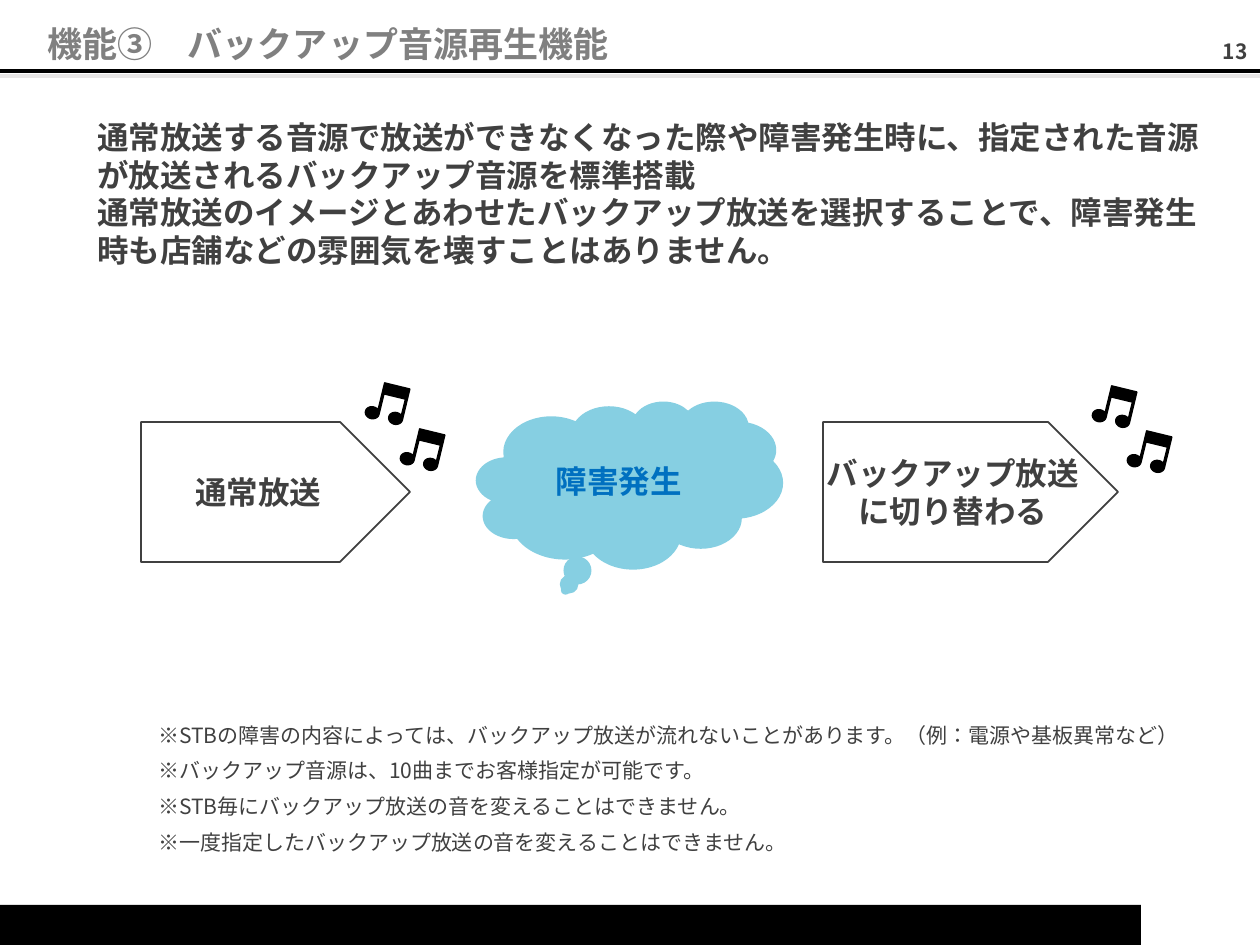
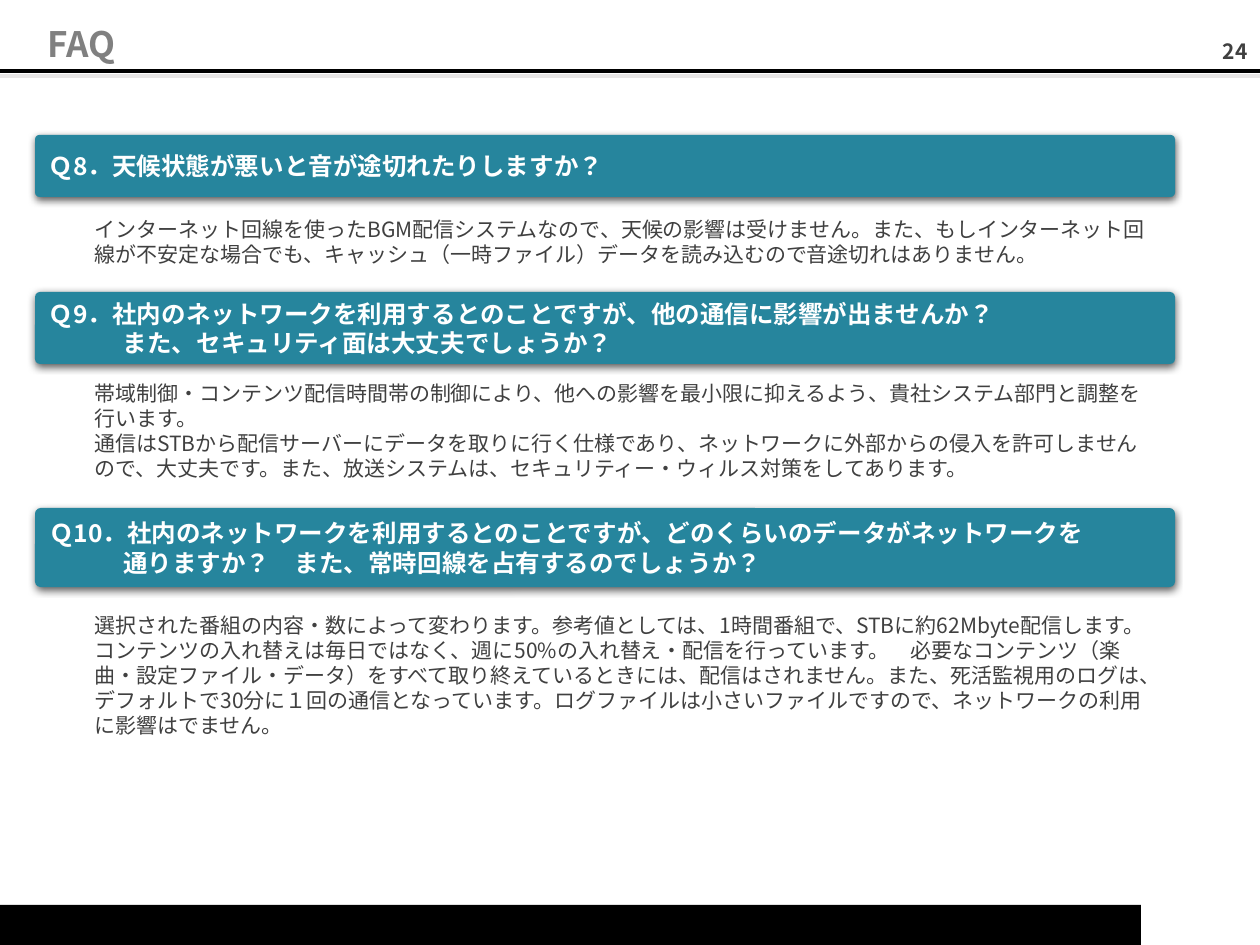
"""Build a two-page deck: the backup audio function and its FAQ."""
from dataclasses import dataclass
import math

import lxml.etree
import pptx
import pptx.dml.color
import pptx.enum.lang
import pptx.enum.shapes
import pptx.enum.text
import pptx.oxml.ns
import pptx.util

RGB = pptx.dml.color.RGBColor
SHAPE = pptx.enum.shapes.MSO_SHAPE
ALIGN = pptx.enum.text.PP_ALIGN
ANCHOR = pptx.enum.text.MSO_ANCHOR

BLACK = RGB(0x00, 0x00, 0x00)
WHITE = RGB(0xFF, 0xFF, 0xFF)
INK = RGB(0x40, 0x40, 0x40)
TITLE_GRAY = RGB(0x80, 0x80, 0x80)
RULE_GRAY = RGB(0xE7, 0xE6, 0xE6)
TEAL = RGB(0x26, 0x85, 0x9D)
SKY = RGB(0x86, 0xCF, 0xE2)
ALERT_BLUE = RGB(0x00, 0x70, 0xC0)

FONT = "Noto Sans CJK JP"
EMU_PER_PX = 914400 / 126
PAGE_WIDTH, PAGE_HEIGHT = 1260, 945
QUESTION_INDENT = 74
NOTE_TILT = 13.6


@dataclass(frozen=True)
class Area:
    left: int
    top: int
    width: int
    height: int


@dataclass(frozen=True)
class Style:
    size: int
    color: RGB = INK
    bold: bool = True
    align: ALIGN = ALIGN.LEFT
    anchor: ANCHOR = ANCHOR.MIDDLE
    wrap: bool = True
    space_after: int = 0


@dataclass(frozen=True)
class Faq:
    question: tuple[str, ...]
    question_top: int
    question_height: int
    answer: tuple[str, ...]
    answer_top: int
    answer_height: int


TITLE = Style(20, TITLE_GRAY, anchor=ANCHOR.TOP)
PAGE_NUMBER = Style(12, align=ALIGN.RIGHT)
LEAD = Style(18)
STEP = Style(18, align=ALIGN.CENTER, wrap=False)
ALERT = Style(18, ALERT_BLUE, align=ALIGN.CENTER)
REMARK = Style(12, bold=False, anchor=ANCHOR.TOP, space_after=6)
QUESTION = Style(14, WHITE)
ANSWER = Style(12, bold=False, anchor=ANCHOR.TOP)

LEAD_LINES = (
    "通常放送する音源で放送ができなくなった際や障害発生時に、指定された音源が放送されるバックアップ音源を標準搭載",
    "通常放送のイメージとあわせたバックアップ放送を選択することで、障害発生時も店舗などの雰囲気を壊すことはありません。",
)
REMARKS = (
    "※STBの障害の内容によっては、バックアップ放送が流れないことがあります。（例：電源や基板異常など）",
    "※バックアップ音源は、10曲までお客様指定が可能です。",
    "※STB毎にバックアップ放送の音を変えることはできません。",
    "※一度指定したバックアップ放送の音を変えることはできません。",
)
STEPS = (
    (Area(141, 422, 269, 140), ("通常放送",)),
    (Area(823, 422, 295, 140), ("バックアップ放送", "に切り替わる")),
)
MUSIC_NOTES = ((403, 430), (368, 384), (1130, 432), (1095, 387))
FAQS = (
    Faq(
        ("Ｑ8．天候状態が悪いと音が途切れたりしますか？",), 135, 62,
        ("インターネット回線を使ったBGM配信システムなので、天候の影響は受けません。また、もしインターネット回線が"
         "不安定な場合でも、キャッシュ（一時ファイル）データを読み込むので音途切れはありません。",), 210, 63,
    ),
    Faq(
        ("Ｑ9．社内のネットワークを利用するとのことですが、他の通信に影響が出ませんか？",
         "また、セキュリティ面は大丈夫でしょうか？"), 292, 72,
        ("帯域制御・コンテンツ配信時間帯の制御により、他への影響を最小限に抑えるよう、貴社システム部門と調整を行います。",
         "通信はSTBから配信サーバーにデータを取りに行く仕様であり、ネットワークに外部からの侵入を許可しませんので、"
         "大丈夫です。また、放送システムは、セキュリティー・ウィルス対策をしてあります。"), 374, 115,
    ),
    Faq(
        ("Ｑ10．社内のネットワークを利用するとのことですが、どのくらいのデータがネットワークを",
         "通りますか？　また、常時回線を占有するのでしょうか？"), 508, 79,
        ("選択された番組の内容・数によって変わります。参考値としては、1時間番組で、STBに約62Mbyte配信します。"
         "コンテンツの入れ替えは毎日ではなく、週に50%の入れ替え・配信を行っています。　必要なコンテンツ"
         "（楽曲・設定ファイル・データ）をすべて取り終えているときには、配信はされません。また、死活監視用のログは、"
         "デフォルトで30分に１回の通信となっています。ログファイルは小さいファイルですので、"
         "ネットワークの利用に影響はでません。",), 606, 140,
    ),
)


def px(length: float) -> pptx.util.Emu:
    return pptx.util.Emu(round(length * EMU_PER_PX))


def bounds(area: Area) -> tuple:
    return px(area.left), px(area.top), px(area.width), px(area.height)


def add_element(parent, tag: str, **attributes: str):
    return lxml.etree.SubElement(parent, pptx.oxml.ns.qn(tag), attributes)


def write(shape, lines: tuple[str, ...], style: Style) -> None:
    frame = shape.text_frame
    frame.text = "\n".join(lines)
    frame.word_wrap = style.wrap
    frame.vertical_anchor = style.anchor
    for para in frame.paragraphs:
        para.alignment = style.align
        para.space_after = pptx.util.Pt(style.space_after)
        for span in para.runs:
            font = span.font
            font.name = FONT
            font.size = pptx.util.Pt(style.size)
            font.bold = style.bold
            font.color.rgb = style.color
            font.language_id = pptx.enum.lang.MSO_LANGUAGE_ID.JAPANESE
            add_element(span._r.get_or_add_rPr(), "a:ea", typeface=FONT)


def add_text(page, area: Area, lines: tuple[str, ...], style: Style):
    box = page.shapes.add_textbox(*bounds(area))
    write(box, lines, style)
    return box


def paint(shape, fill: RGB | None, line: RGB | None = None, weight: float = 1) -> None:
    shape.shadow.inherit = False
    if fill is None:
        shape.fill.background()
    else:
        shape.fill.solid()
        shape.fill.fore_color.rgb = fill
    if line is None:
        shape.line.fill.background()
    else:
        shape.line.color.rgb = line
        shape.line.width = pptx.util.Pt(weight)


def add_shape(page, kind: SHAPE, area: Area, fill: RGB | None, line: RGB | None = None):
    shape = page.shapes.add_shape(kind, *bounds(area))
    paint(shape, fill, line)
    return shape


def add_rule(page, top: int, color: RGB) -> None:
    rule = page.shapes.add_connector(
        pptx.enum.shapes.MSO_CONNECTOR.STRAIGHT, 0, px(top), px(PAGE_WIDTH), px(top))
    rule.line.color.rgb = color
    rule.line.width = pptx.util.Pt(2.25)
    add_element(rule._element.spPr, "a:effectLst")


def add_page(deck, title: str, number: int):
    page = deck.slides.add_slide(deck.slide_layouts[5])
    add_shape(page, SHAPE.RECTANGLE, Area(0, 905, 1141, 40), BLACK)
    add_rule(page, 71, BLACK)
    add_rule(page, 76, RULE_GRAY)
    add_text(page, Area(1121, 33, 139, 37), (str(number),), PAGE_NUMBER)
    heading = page.shapes.title
    heading.left, heading.top, heading.width, heading.height = bounds(Area(35, 16, 1062, 55))
    write(heading, (title,), TITLE)
    heading.text_frame.auto_size = pptx.enum.text.MSO_AUTO_SIZE.NONE
    return page


def note_head(center_x: int) -> list[tuple[float, float]]:
    angles = [math.radians(degrees) for degrees in range(45, 361, 15)]
    return [(center_x + 7 * math.cos(angle), 32 - 6 * math.sin(angle)) for angle in angles]


def add_music_note(page, left: int, top: int) -> None:
    outline = [(12, 0), *note_head(7), (14, 11), (36, 11), *note_head(31), (38, 0)]
    points = [(px(x), px(y)) for x, y in outline]
    builder = page.shapes.build_freeform(*points[0])
    builder.add_line_segments(points[1:], close=True)
    note = builder.convert_to_shape(px(left), px(top))
    paint(note, BLACK, BLACK, 0.75)
    note.rotation = NOTE_TILT


def add_soft_shadow(shape) -> None:
    effects = shape._element.spPr.find(pptx.oxml.ns.qn("a:effectLst"))
    shadow = add_element(
        effects, "a:outerShdw", blurRad=str(pptx.util.Pt(4.5)), dist=str(pptx.util.Pt(1.5)),
        dir="5400000", algn="ctr", rotWithShape="0")
    color = add_element(shadow, "a:srgbClr", val=str(BLACK))
    add_element(color, "a:alpha", val="63000")


def add_faq(page, faq: Faq) -> None:
    band = add_shape(
        page, SHAPE.ROUNDED_RECTANGLE, Area(35, faq.question_top, 1140, faq.question_height), TEAL)
    band.adjustments[0] = 0.07
    add_soft_shadow(band)
    write(band, faq.question, QUESTION)
    for para in band.text_frame.paragraphs[1:]:
        para._p.get_or_add_pPr().set("marL", str(px(QUESTION_INDENT)))
    add_text(page, Area(82, faq.answer_top, 1087, faq.answer_height), faq.answer, ANSWER)


def build_backup_page(deck) -> None:
    page = add_page(deck, "機能③　バックアップ音源再生機能", 13)
    lead = add_shape(page, SHAPE.ROUNDED_RECTANGLE, Area(79, 106, 1140, 175), None)
    lead.adjustments[0] = 0.11
    write(lead, LEAD_LINES, LEAD)
    add_text(page, Area(146, 716, 1071, 146), REMARKS, REMARK)
    for left, top in MUSIC_NOTES:
        add_music_note(page, left, top)
    for area, lines in STEPS:
        write(add_shape(page, SHAPE.PENTAGON, area, WHITE, INK), lines, STEP)
    cloud = add_shape(page, SHAPE.CLOUD_CALLOUT, Area(476, 401, 307, 168), SKY)
    write(cloud, ("障害発生",), ALERT)


def build_faq_page(deck) -> None:
    page = add_page(deck, "FAQ", 24)
    for faq in FAQS:
        add_faq(page, faq)


def main() -> None:
    deck = pptx.Presentation()
    deck.slide_width, deck.slide_height = px(PAGE_WIDTH), px(PAGE_HEIGHT)
    build_backup_page(deck)
    build_faq_page(deck)
    deck.save("out.pptx")


if __name__ == "__main__":
    main()
